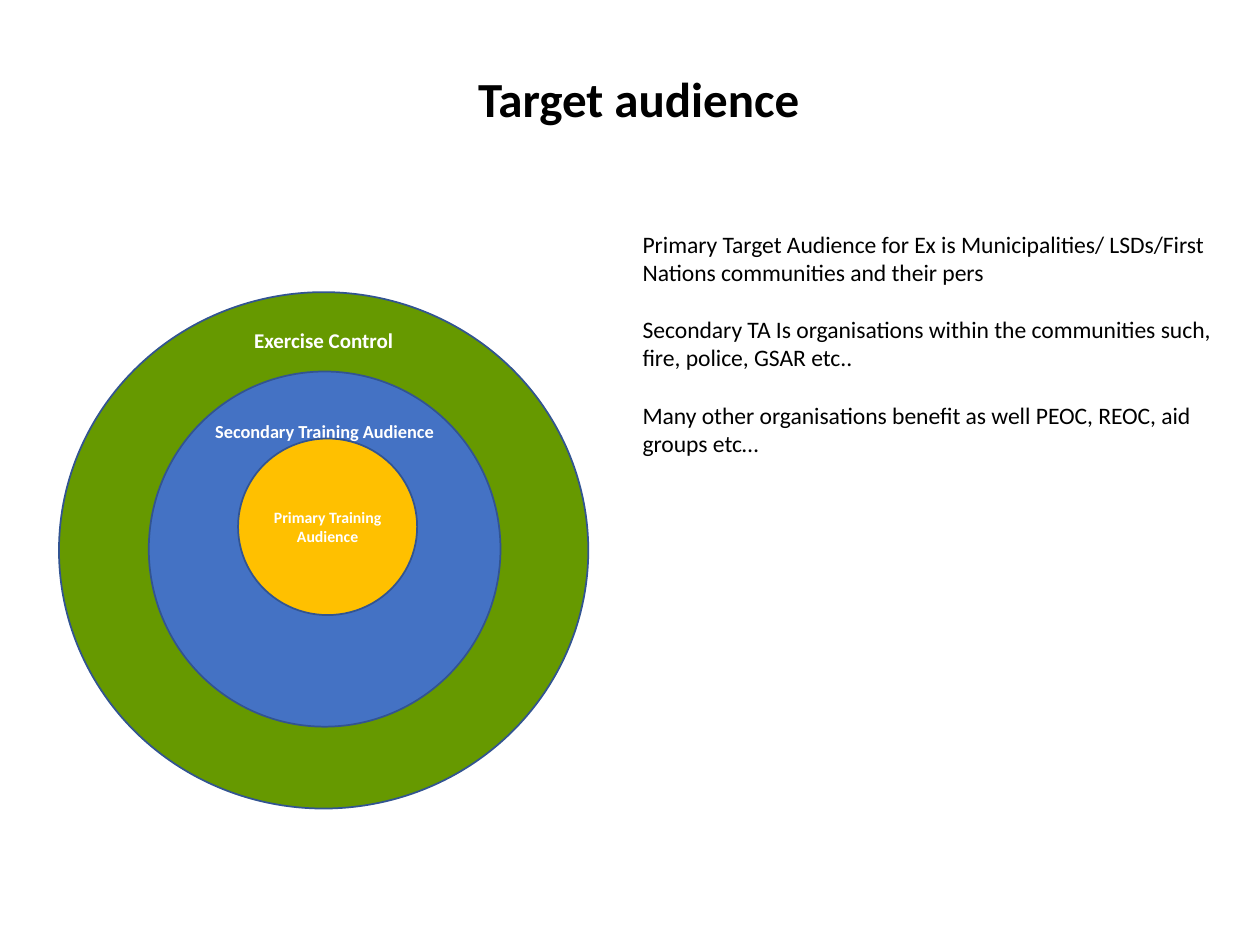
from pptx import Presentation
from pptx import util as u
from pptx.dml.color import RGBColor
from pptx.enum import shapes, text
from pptx.oxml.ns import qn
from lxml import etree

TITLE = "Target audience"
NOTES = [
    "Primary Target Audience for Ex is Municipalities/ LSDs/First Nations communities and their pers",
    "Secondary TA Is organisations within the communities such, fire, police, GSAR etc..",
    "Many other organisations benefit as well PEOC, REOC, aid groups etc…",
]
# label, (left, top, width, height), fill, size, label centre
RINGS = [
    ("Exercise Control", (1.19, 5.89, 10.67, 10.41), "exercise", 12, 6.86),
    ("Secondary Training Audience", (3.0, 7.49, 7.09, 7.16), "secondary", 10.5, 8.69),
    ("Primary Training Audience", (4.8, 8.84, 3.61, 3.56), "primary", 9, None),
]
THEME = {
    "font": "Calibri", "title": 28, "body": 13.5,
    "text": "000000", "label": "FFFFFF", "line": "325491",
    "exercise": "669900", "secondary": "4472C4", "primary": "FFC000",
}
LABEL_H = 0.8


def rgb(name):
    return RGBColor.from_string(THEME[name])


def place(sp, box):
    sp.left, sp.top, sp.width, sp.height = (u.Cm(v) for v in box)


def add_run(p, words, size, color, bold=False):
    r = p.add_run()
    r.text = words
    r.font.name, r.font.size, r.font.bold = THEME["font"], u.Pt(size), bold
    r.font.color.rgb = rgb(color)


def set_label(sp, words, size):
    tf = sp.text_frame
    tf.word_wrap = True
    tf.vertical_anchor = text.MSO_ANCHOR.MIDDLE
    tf.margin_left = tf.margin_right = u.Cm(0.18)
    tf.margin_top = tf.margin_bottom = u.Cm(0.13)
    p = tf.paragraphs[0]
    p.alignment = text.PP_ALIGN.CENTER
    add_run(p, words, size, "label", True)


def add_ring(s, words, box, fill, size, label_y):
    left, top, width, height = box
    sp = s.shapes.add_shape(shapes.MSO_SHAPE.OVAL, *(u.Cm(v) for v in box))
    sp.shadow.inherit = False
    sp.fill.solid()
    sp.fill.fore_color.rgb = rgb(fill)
    sp.line.color.rgb = rgb("line")
    sp.line.width = u.Pt(1)
    if label_y is not None:
        sp = s.shapes.add_textbox(
            u.Cm(left), u.Cm(label_y - LABEL_H / 2), u.Cm(width), u.Cm(LABEL_H))
    set_label(sp, words, size)


def add_title(s):
    sp = s.shapes.title
    place(sp, (1.75, 1.02, 21.89, 3.68))
    tf = sp.text_frame
    tf.vertical_anchor = text.MSO_ANCHOR.TOP
    tf.margin_left, tf.margin_top = u.Cm(0.61), u.Cm(0.5)
    p = tf.paragraphs[0]
    p.alignment = text.PP_ALIGN.CENTER
    p.line_spacing = 0.9
    add_run(p, TITLE, THEME["title"], "text", True)


def add_notes(s):
    sp = s.placeholders[1]
    place(sp, (12.7, 4.5, 12.34, 6.02))
    tf = sp.text_frame
    for i, words in enumerate(NOTES):
        p = tf.add_paragraph() if i else tf.paragraphs[0]
        pPr = p._p.get_or_add_pPr()
        pPr.set("marL", "0")
        pPr.set("indent", "0")
        etree.SubElement(pPr, qn("a:buNone"))
        p.space_before = u.Pt(16.5 if i else 0)
        add_run(p, words, THEME["body"], "text")


def main():
    prs = Presentation()
    prs.slide_width, prs.slide_height = u.Cm(25.4), u.Cm(19.05)
    s = prs.slides.add_slide(prs.slide_layouts[1])
    add_title(s)
    for ring in RINGS:
        add_ring(s, *ring)
    add_notes(s)
    prs.save("out.pptx")


if __name__ == "__main__":
    main()
